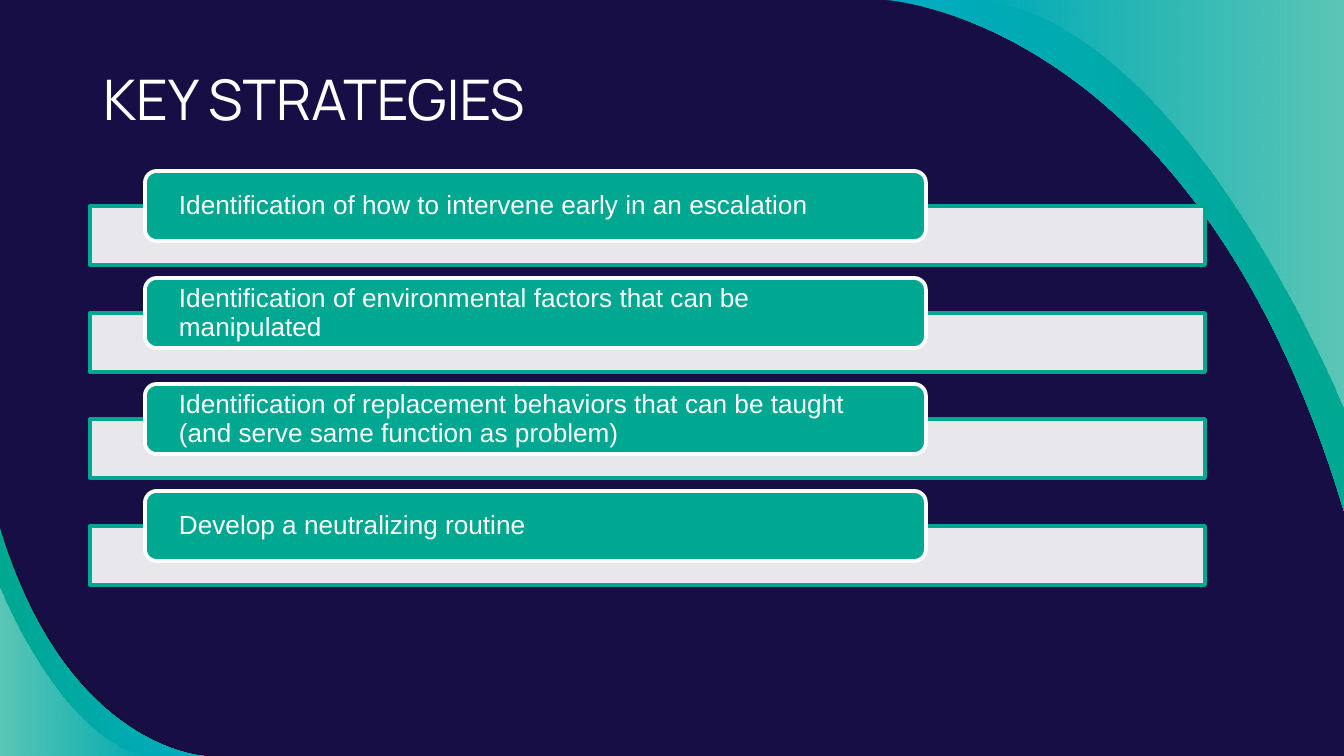
from dataclasses import dataclass

from lxml import etree
from pptx import Presentation
from pptx.dml.color import RGBColor
from pptx.enum.shapes import MSO_SHAPE
from pptx.enum.text import MSO_ANCHOR, PP_ALIGN
from pptx.oxml.ns import qn
from pptx.util import Pt

RECT = MSO_SHAPE.RECTANGLE
ROUND_RECT = MSO_SHAPE.ROUNDED_RECTANGLE
TOP = MSO_ANCHOR.TOP
MIDDLE = MSO_ANCHOR.MIDDLE
LEFT = PP_ALIGN.LEFT

EMU_PER_PX = 914400 / 134.4
SLIDE_W, SLIDE_H = 1344, 756


@dataclass(frozen=True)
class Theme:
    navy: str = "160E44"
    shade: str = "12102F"
    cyan: str = "00ACC2"
    teal: str = "00A791"
    white: str = "FFFFFF"
    title_font: str = "Manrope"
    body_font: str = "Arial"
    title_size: int = 30
    body_size: int = 14
    line_width: int = 2


THEME = Theme()

STRATEGIES = [
    "Identification of how to intervene early in an escalation",
    "Identification of environmental factors that can be manipulated",
    "Identification of replacement behaviors that can be taught "
    "(and serve same function as problem)",
    "Develop a neutralizing routine",
]


def px(n):
    return round(n * EMU_PER_PX)


def rgb(value):
    return RGBColor.from_string(value)


def set_alpha(color, percent):
    etree.SubElement(color, qn("a:alpha"), val=str(percent * 1000))


def fill_solid(sp, color, alpha=100):
    sp.fill.solid()
    sp.fill.fore_color.rgb = rgb(color)
    if alpha < 100:
        set_alpha(sp._element.spPr.find(qn("a:solidFill"))[0], alpha)


def fill_gradient(sp, stops):
    sp.fill.gradient()
    sp.fill.gradient_angle = 0
    for position, (stop, (color, alpha)) in enumerate(zip(sp.fill.gradient_stops, stops)):
        stop.position = position
        stop.color.rgb = rgb(color)
        if alpha < 100:
            set_alpha(stop._gs[0], alpha)


def bend_first_line(sp, controls):
    line = sp._element.spPr.find(".//" + qn("a:lnTo"))
    line.tag = qn("a:cubicBezTo")
    for i, (x, y) in enumerate(controls):
        pt = etree.Element(qn("a:pt"), x=str(px(x) - sp.left), y=str(px(y) - sp.top))
        line.insert(i, pt)


def add_corner(slide, curve, corner):
    start, *controls, end = curve
    builder = slide.shapes.build_freeform(*map(px, start), scale=1.0)
    builder.add_line_segments([tuple(map(px, pt)) for pt in (end, corner)], close=True)
    sp = builder.convert_to_shape()
    bend_first_line(sp, controls)
    sp.shadow.inherit = False
    sp.line.fill.background()
    return sp


def add_box(slide, kind, box, line):
    sp = slide.shapes.add_shape(kind, *map(px, box))
    sp.shadow.inherit = False
    sp.line.color.rgb = rgb(line)
    sp.line.width = Pt(THEME.line_width)
    return sp


def add_text(slide, box, text, font, size, anchor, inset_x, inset_y):
    tf = slide.shapes.add_textbox(*map(px, box)).text_frame
    tf.word_wrap = True
    tf.vertical_anchor = anchor
    tf.margin_left = tf.margin_right = px(inset_x)
    tf.margin_top = tf.margin_bottom = px(inset_y)
    p = tf.paragraphs[0]
    p.alignment = LEFT
    r = p.add_run()
    r.text = text
    r.font.name = font
    r.font.size = Pt(size)
    r.font.color.rgb = rgb(THEME.white)
    return p


def add_corners(slide):
    bottom_left, top_right = (0, SLIDE_H), (SLIDE_W, 0)
    cyan, teal = (THEME.cyan, 100), (THEME.teal, 100)
    clear, veil = (THEME.white, 0), (THEME.white, 36)
    shade = add_corner(slide, [(0, 523), (69, 749), (210, 756), (210, 756)], bottom_left)
    fill_solid(shade, THEME.shade, 54)
    for curve, corner, stops in (
        ([(204, 756), (204, 756), (66, 749), (0, 528)], bottom_left, (teal, cyan)),
        ([(0, 587), (0, 587), (63, 746), (149, 756)], bottom_left, (veil, clear)),
        ([(886, 0), (886, 0), (1196, 16), (1344, 511)], top_right, (cyan, teal)),
        ([(1344, 411), (1344, 411), (1189, 26), (980, 0)], top_right, (clear, veil)),
    ):
        fill_gradient(add_corner(slide, curve, corner), stops)


def add_title(slide, text):
    add_text(slide, (90, 52, 1034, 93), text,
             THEME.title_font, THEME.title_size, TOP, 13, 13)


def add_strategy(slide, text, y):
    bar = add_box(slide, RECT, (90, y + 35, 1115, 59), THEME.teal)
    fill_solid(bar, THEME.white, 90)
    label = add_box(slide, ROUND_RECT, (145, y, 781, 70), THEME.white)
    fill_solid(label, THEME.teal)
    p = add_text(slide, (149, y + 4, 774, 63), text,
                 THEME.body_font, THEME.body_size, MIDDLE, 30, 0)
    p.line_spacing = 0.9
    p.space_after = Pt(4.9)


def main():
    prs = Presentation()
    prs.slide_width, prs.slide_height = px(SLIDE_W), px(SLIDE_H)
    slide = prs.slides.add_slide(prs.slide_layouts[6])
    slide.background.fill.solid()
    slide.background.fill.fore_color.rgb = rgb(THEME.navy)
    add_corners(slide)
    add_title(slide, "KEY STRATEGIES")
    for i, text in enumerate(STRATEGIES):
        add_strategy(slide, text, 171 + round(i * 320 / 3))
    prs.save("out.pptx")


if __name__ == "__main__":
    main()
